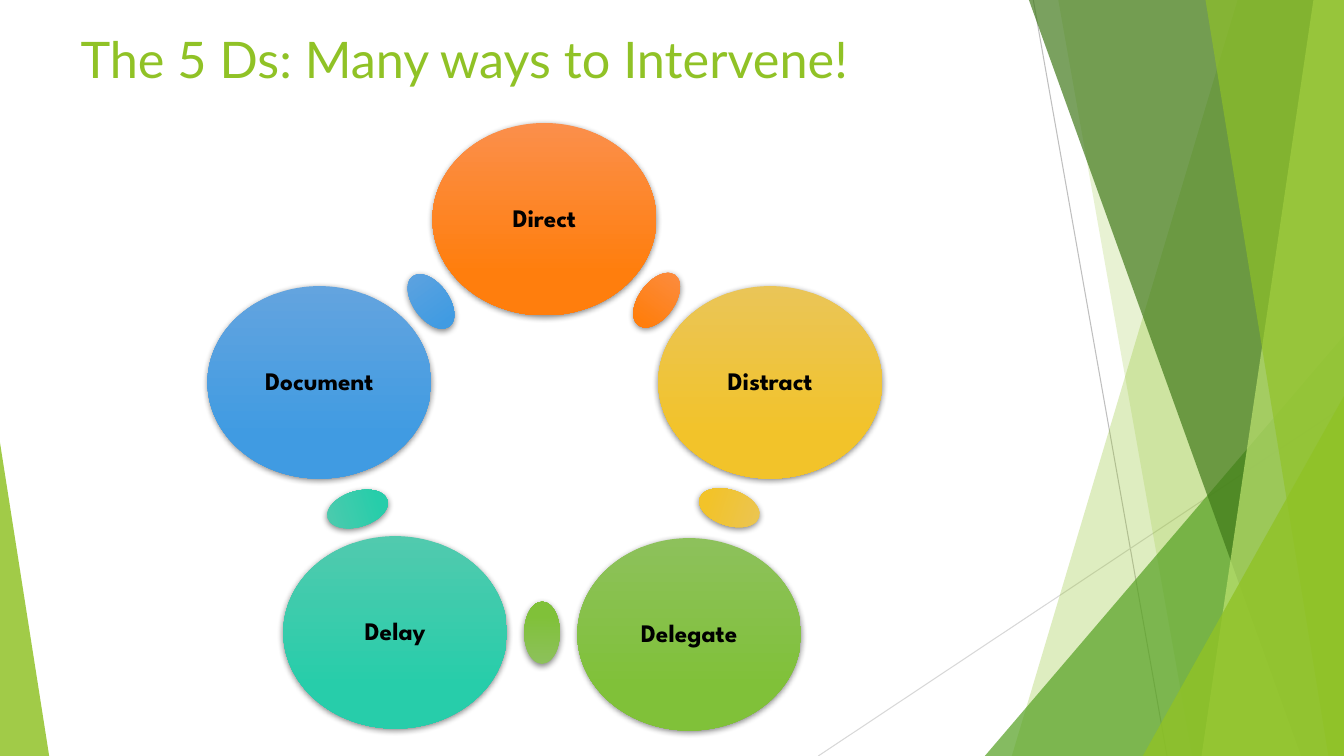
from dataclasses import dataclass

from lxml.etree import SubElement
from pptx import Presentation
from pptx.dml.color import RGBColor
from pptx.enum.shapes import MSO_CONNECTOR, MSO_SHAPE
from pptx.enum.text import MSO_ANCHOR, PP_ALIGN
from pptx.oxml.ns import qn
from pptx.shapes.autoshape import Shape
from pptx.slide import Slide
from pptx.text.text import TextFrame
from pptx.util import Cm, Pt

WIDE, HIGH = 33.87, 19.05
OVAL = (5.64, 4.85)
PETAL = (0.9, 1.57)
LIME = "90C226"


@dataclass
class Ray:
    start: tuple[float, float]
    end: tuple[float, float]
    color: str


@dataclass
class Shard:
    """Band from a slanted left edge to the right side of the slide."""
    top: float
    base: float
    color: str
    alpha: int


@dataclass
class Wedge:
    """Right triangle on the base of the slide; apex 0 is left, 1 is right."""
    left: float
    top: float
    width: float
    apex: int
    color: str
    alpha: int


@dataclass
class Step:
    """One oval and the petal that leads to the next one."""
    name: str
    oval: tuple[float, float]
    petal: tuple[float, float]
    turn: float
    light: str
    deep: str


RAYS = [
    Ray((26.04, 0), (29.41, HIGH), "BFBFBF"),
    Ray((WIDE, 10.24), (20.62, HIGH), "D8D8D8"),
]
FACETS = [
    Shard(31.19, 25.5, LIME, 29),
    Shard(26.67, 30.05, LIME, 20),
    Wedge(24.82, 8.46, 9.05, 1, "54A021", 71),
    Shard(25.93, 32.79, "3F7818", 69),
    Shard(33.1, 30.28, "BFE471", 69),
    Shard(30.38, 33.48, LIME, 64),
    Wedge(28.8, 9.98, 5.07, 1, LIME, 80),
    Wedge(0, 11.15, 1.24, 0, LIME, 84),
]
STEPS = [
    Step("Direct", (10.9, 3.1), (16.1, 6.78), 36, "FB8F4B", "FF7E0D"),
    Step("Distract", (16.59, 7.21), (17.93, 12.01), 107.9, "EAC557", "F2C32A"),
    Step("Delegate", (14.55, 13.56), (13.21, 15.16), 180.3, "8DC15B", "80C139"),
    Step("Delay", (7.14, 13.51), (8.56, 12.04), 253.1, "51CAAE", "27CDAA"),
    Step("Document", (5.23, 7.21), (10.41, 6.81), 324, "63A4DF", "409BE2"),
]


def tint(code: str) -> RGBColor:
    return RGBColor.from_string(code)


def draw_ray(slide: Slide, ray: Ray) -> None:
    ends = [Cm(value) for value in ray.start + ray.end]
    line = slide.shapes.add_connector(MSO_CONNECTOR.STRAIGHT, *ends)
    line.line.color.rgb = tint(ray.color)
    line.line.width = Pt(0.75)
    SubElement(line._element.spPr, qn("a:effectLst"))


def draw_facet(slide: Slide, facet: Shard | Wedge) -> None:
    if isinstance(facet, Shard):
        form = slide.shapes.build_freeform(Cm(facet.top), Cm(0))
        form.add_line_segments([
            (Cm(WIDE), Cm(0)), (Cm(WIDE), Cm(HIGH)), (Cm(facet.base), Cm(HIGH)),
        ])
        shape = form.convert_to_shape()
    else:
        shape = slide.shapes.add_shape(
            MSO_SHAPE.ISOSCELES_TRIANGLE, Cm(facet.left), Cm(facet.top),
            Cm(facet.width), Cm(HIGH - facet.top))
        shape.adjustments[0] = facet.apex
    shape.shadow.inherit = False
    shape.line.fill.background()
    shape.fill.solid()
    shape.fill.fore_color.rgb = tint(facet.color)
    hue = shape._element.spPr.find(f"{qn('a:solidFill')}/{qn('a:srgbClr')}")
    SubElement(hue, qn("a:alpha"), val=str(facet.alpha * 1000))


def cast_shadow(shape: Shape) -> None:
    shape.shadow.inherit = False
    effects = shape._element.spPr.find(qn("a:effectLst"))
    outer = SubElement(effects, qn("a:outerShdw"), blurRad=str(Pt(4.5)),
                       dist=str(Pt(1.5)), dir="5400000", rotWithShape="0")
    hue = SubElement(outer, qn("a:srgbClr"), val="000000")
    SubElement(hue, qn("a:alpha"), val="47000")


def add_oval(slide: Slide, spot: tuple[float, float],
             size: tuple[float, float], step: Step) -> Shape:
    box = [Cm(value) for value in spot + size]
    oval = slide.shapes.add_shape(MSO_SHAPE.OVAL, *box)
    oval.line.fill.background()
    oval.fill.gradient()
    oval.fill.gradient_angle = 270
    looks = [(0, step.light), (0.78, step.deep)]
    for stop, (place, code) in zip(oval.fill.gradient_stops, looks):
        stop.position = place
        stop.color.rgb = tint(code)
    cast_shadow(oval)
    return oval


def write(frame: TextFrame, text: str, font: str, size: int, code: str,
          bold: bool = False) -> None:
    frame.word_wrap = True
    frame.text = text
    style = frame.paragraphs[0].runs[0].font
    style.name, style.size, style.bold = font, Pt(size), bold
    style.color.rgb = tint(code)


def draw_step(slide: Slide, step: Step) -> None:
    oval = add_oval(slide, step.oval, OVAL, step)
    frame = oval.text_frame
    write(frame, step.name, "League Spartan", 18, "000000", bold=True)
    frame.vertical_anchor = MSO_ANCHOR.MIDDLE
    frame.margin_left = frame.margin_right = Cm(0.05)
    frame.margin_top = frame.margin_bottom = Cm(0.05)
    frame.paragraphs[0].alignment = PP_ALIGN.CENTER
    frame.paragraphs[0].line_spacing = 0.9
    add_oval(slide, step.petal, PETAL, step).rotation = step.turn


def main() -> None:
    deck = Presentation()
    deck.slide_width, deck.slide_height = Cm(WIDE), Cm(HIGH)
    slide = deck.slides.add_slide(deck.slide_layouts[6])
    for ray in RAYS:
        draw_ray(slide, ray)
    for facet in FACETS:
        draw_facet(slide, facet)
    title = slide.shapes.add_textbox(Cm(1.78), Cm(0.58), Cm(23.88), Cm(3.66))
    write(title.text_frame, "The 5 Ds: Many ways to Intervene!", "Lato", 36, LIME)
    for step in STEPS:
        draw_step(slide, step)
    deck.save("out.pptx")


if __name__ == "__main__":
    main()
